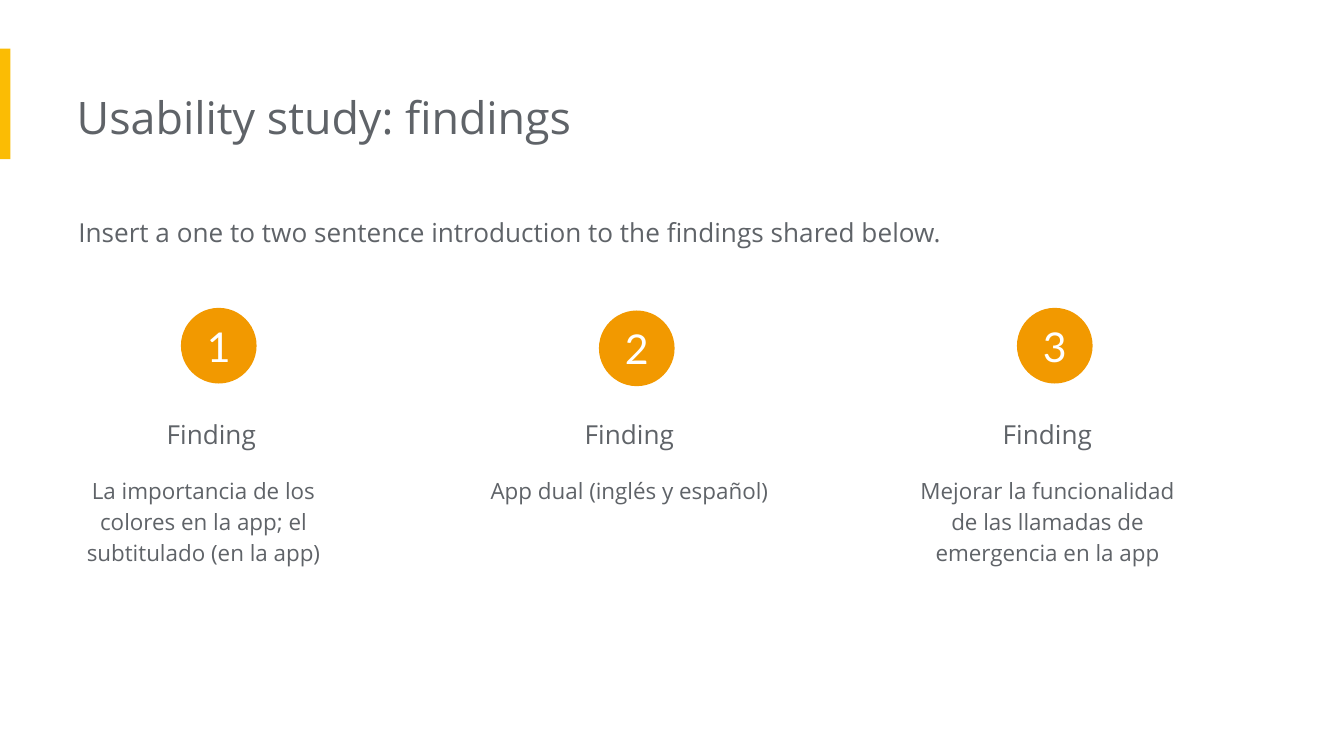
import pptx
import pptx.dml.color
import pptx.enum.shapes
import pptx.enum.text
import pptx.util
from pptx.util import Cm

YELLOW = pptx.dml.color.RGBColor(0xFB, 0xBC, 0x04)
ORANGE = pptx.dml.color.RGBColor(0xF2, 0x99, 0x00)
GRAY = pptx.dml.color.RGBColor(0x5F, 0x63, 0x68)
WHITE = pptx.dml.color.RGBColor(0xFF, 0xFF, 0xFF)

SHAPES = pptx.enum.shapes.MSO_SHAPE
LEFT = pptx.enum.text.PP_ALIGN.LEFT
CENTER = pptx.enum.text.PP_ALIGN.CENTER

deck = pptx.Presentation()
deck.slide_width = Cm(25.4)
deck.slide_height = Cm(14.29)
page = deck.slides.add_slide(deck.slide_layouts[6])


def add_solid(kind, left, top, width, height, color):
    shape = page.shapes.add_shape(kind, Cm(left), Cm(top), Cm(width), Cm(height))
    shape.fill.solid()
    shape.fill.fore_color.rgb = color
    shape.line.fill.background()
    shape.shadow.inherit = False
    return shape


def add_text(text, left, top, width, height, size, spacing, align=LEFT):
    box = page.shapes.add_textbox(Cm(left), Cm(top), Cm(width), Cm(height))
    frame = box.text_frame
    frame.word_wrap = True
    frame.auto_size = pptx.enum.text.MSO_AUTO_SIZE.SHAPE_TO_FIT_TEXT
    frame.margin_left = 0
    frame.margin_top = frame.margin_right = frame.margin_bottom = Cm(0.25)
    frame.text = text
    para = frame.paragraphs[0]
    para.alignment = align
    para.line_spacing = spacing
    span = para.runs[0]
    span.font.name = "Open Sans"
    span.font.size = pptx.util.Pt(size)
    span.font.color.rgb = GRAY


# Accent bar, title and introduction
add_solid(SHAPES.RECTANGLE, 0, 0.92, 0.2, 2.09, YELLOW)
add_text("Usability study: findings", 1.45, 1.45, 17.1, 1.53, 24, 1.0)
add_text("Insert a one to two sentence introduction to the findings shared below.",
         1.48, 3.76, 18.03, 1.19, 14, 1.15)

# Findings: body text, body left, body height, circle top
findings = [
    ("La importancia de los colores en la app; el subtitulado (en la app)", 1.22, 2.26, 5.82),
    ("App dual (inglés y español)", 9.27, 1.09, 5.87),
    ("Mejorar la funcionalidad de las llamadas de emergencia en la app", 17.17, 2.26, 5.82),
]
COLUMN_STEP = 7.9

for index, (body, body_left, body_height, circle_top) in enumerate(findings):
    offset = index * COLUMN_STEP

    # Numbered circle
    circle = add_solid(SHAPES.OVAL, 3.42 + offset, circle_top, 1.43, 1.43, ORANGE)
    frame = circle.text_frame
    frame.margin_left = frame.margin_top = frame.margin_right = frame.margin_bottom = 0
    frame.vertical_anchor = pptx.enum.text.MSO_ANCHOR.MIDDLE
    frame.text = str(index + 1)
    para = frame.paragraphs[0]
    para.alignment = CENTER
    span = para.runs[0]
    span.font.name = "Lato"
    span.font.size = pptx.util.Pt(22)
    span.font.color.rgb = WHITE

    # Heading and description
    add_text("Finding", 1.52 + offset, 7.37, 5.2, 1.4, 14, 1.5, CENTER)
    add_text(body, body_left, 8.69, 5.51, body_height, 12, 1.15, CENTER)

deck.save("out.pptx")
